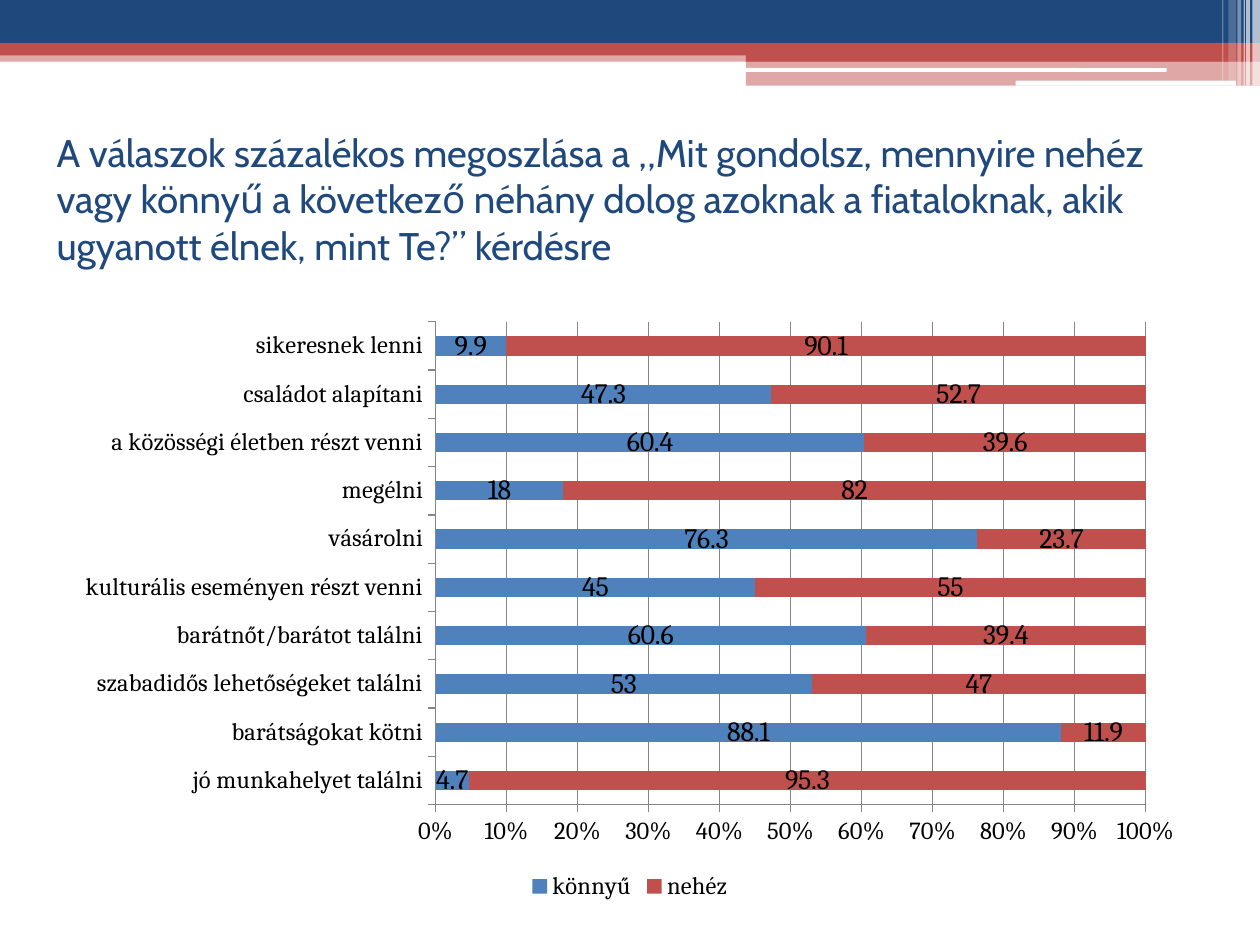
"""Build the slide with the percentage distribution of answers."""
from dataclasses import dataclass

from lxml import etree
from pptx import Presentation
from pptx.chart.data import CategoryChartData
from pptx.dml.color import RGBColor
from pptx.enum.chart import XL_CHART_TYPE, XL_LEGEND_POSITION, XL_TICK_MARK
from pptx.enum.shapes import MSO_SHAPE
from pptx.enum.text import MSO_ANCHOR
from pptx.oxml.ns import qn
from pptx.util import Inches, Pt

RECTANGLE = MSO_SHAPE.RECTANGLE
ROUNDED = MSO_SHAPE.ROUNDED_RECTANGLE
STACKED_BARS = XL_CHART_TYPE.BAR_STACKED_100
BOTTOM = XL_LEGEND_POSITION.BOTTOM
TICK_OUTSIDE = XL_TICK_MARK.OUTSIDE
TICK_NONE = XL_TICK_MARK.NONE
MIDDLE = MSO_ANCHOR.MIDDLE

COLUMNS, ROWS = 100, 75


@dataclass(frozen=True)
class Theme:
    """Colours, fonts and type sizes of the slide."""
    navy: str = "1F497D"
    red: str = "C0504D"
    blue: str = "4F81BD"
    white: str = "FFFFFF"
    black: str = "000000"
    grey: str = "868686"
    title_font: str = "Cabin"
    chart_font: str = "Cambria"
    title_size: int = 22
    label_size: int = 16
    axis_size: int = 14


THEME = Theme()

TITLE = (
    "A válaszok százalékos megoszlása a „Mit gondolsz, mennyire nehéz vagy "
    "könnyű a következő néhány dolog azoknak a fiataloknak, akik ugyanott "
    "élnek, mint Te?” kérdésre"
)

BANDS = [
    ((0, 4, 100, 0.9), THEME.red, 50),
    ((0, 0, 100, 3.4), THEME.navy, 100),
    ((0, 3.4, 100, 1), THEME.red, 100),
    ((59.2, 3.9, 40.8, 1), THEME.red, 100),
    ((59.2, 4.8, 40.8, 2), THEME.red, 50),
]
SLOTS = [(59.1, 5.4, 33.5, 0.3), (80.6, 6.4, 17.5, 0.4)]
STRIPES = [
    (99.4, 0.6, 6.8, 65),
    (98.9, 0.3, 6.8, 65),
    (98.7, 0.1, 6.8, 60),
    (98.2, 0.3, 6.8, 40),
    (97.5, 0.6, 6.4, 20),
    (97, 0.1, 6.4, 30),
]

ANSWERS = {
    "jó munkahelyet találni": (4.7, 95.3),
    "barátságokat kötni": (88.1, 11.9),
    "szabadidős lehetőségeket találni": (53, 47),
    "barátnőt/barátot találni": (60.6, 39.4),
    "kulturális eseményen részt venni": (45, 55),
    "vásárolni": (76.3, 23.7),
    "megélni": (18, 82),
    "a közösségi életben részt venni": (60.4, 39.6),
    "családot alapítani": (47.3, 52.7),
    "sikeresnek lenni": (9.9, 90.1),
}
SERIES = {"könnyű": THEME.blue, "nehéz": THEME.red}


def apply_format(target, values):
    """Set every attribute named in a dict of format values."""
    for name, value in values.items():
        setattr(target, name, value)


class SlideBuilder:
    """Draws elements on the current slide in the style of a theme."""

    def __init__(self, presentation, theme):
        """Add a blank slide and keep the theme."""
        self.theme = theme
        self.cell_width = presentation.slide_width / COLUMNS
        self.cell_height = presentation.slide_height / ROWS
        self.slide = presentation.slides.add_slide(presentation.slide_layouts[6])

    def place(self, box):
        """Turn columns and rows into slide lengths."""
        left, top, width, height = box
        return (round(left * self.cell_width), round(top * self.cell_height),
                round(width * self.cell_width), round(height * self.cell_height))

    def style_font(self, font, name, size, color):
        """Give a font its name, size and colour."""
        apply_format(font, {"name": name, "size": Pt(size), "bold": False})
        font.color.rgb = RGBColor.from_string(color)

    def band(self, box, color, opacity=100, kind=RECTANGLE):
        """Draw a borderless band with an opacity in percent."""
        shape = self.slide.shapes.add_shape(kind, *self.place(box))
        shape.shadow.inherit = False
        shape.line.fill.background()
        shape.fill.solid()
        shape.fill.fore_color.rgb = RGBColor.from_string(color)
        if opacity < 100:
            color_element = next(shape.element.spPr.iter(qn("a:srgbClr")))
            alpha = etree.SubElement(color_element, qn("a:alpha"))
            alpha.set("val", str(opacity * 1000))

    def title(self, box, text):
        """Write the title in a wrapped text box."""
        frame = self.slide.shapes.add_textbox(*self.place(box)).text_frame
        apply_format(frame, {"word_wrap": True, "vertical_anchor": MIDDLE})
        run = frame.paragraphs[0].add_run()
        run.text = text
        self.style_font(run.font, self.theme.title_font,
                        self.theme.title_size, self.theme.navy)

    def axis(self, axis, values):
        """Format an axis, its line and its labels."""
        apply_format(axis, {"major_tick_mark": TICK_OUTSIDE,
                            "minor_tick_mark": TICK_NONE, **values})
        lines = [axis.format.line]
        if axis.has_major_gridlines:
            lines.append(axis.major_gridlines.format.line)
        for line in lines:
            line.color.rgb = RGBColor.from_string(self.theme.grey)
            line.width = Pt(0.75)
        self.style_font(axis.tick_labels.font, self.theme.chart_font,
                        self.theme.axis_size, self.theme.black)

    def bar_chart(self, box, answers, series_colors):
        """Draw stacked percentage bars with value labels and a legend."""
        theme = self.theme
        data = CategoryChartData()
        data.categories = list(answers)
        for name, values in zip(series_colors, zip(*answers.values())):
            data.add_series(name, values)
        chart = self.slide.shapes.add_chart(
            STACKED_BARS, *self.place(box), data).chart
        apply_format(chart, {"has_title": False, "has_legend": True})
        self.style_font(chart.font, theme.chart_font, theme.axis_size, theme.black)
        apply_format(chart.legend, {"position": BOTTOM, "include_in_layout": False})
        self.style_font(chart.legend.font, theme.chart_font,
                        theme.axis_size, theme.black)
        self.axis(chart.category_axis, {"has_major_gridlines": False})
        self.axis(chart.value_axis, {"has_major_gridlines": True,
                                     "major_unit": 0.1,
                                     "minimum_scale": 0, "maximum_scale": 1})
        apply_format(chart.value_axis.tick_labels,
                     {"number_format": "0%", "number_format_is_linked": False})
        plot = chart.plots[0]
        apply_format(plot, {"gap_width": 150, "overlap": 100,
                            "vary_by_categories": False})
        for series, color in zip(plot.series, series_colors.values()):
            series.format.fill.solid()
            series.format.fill.fore_color.rgb = RGBColor.from_string(color)
            series.data_labels.show_value = True
            self.style_font(series.data_labels.font, theme.chart_font,
                            theme.label_size, theme.black)


def main():
    """Build and save the presentation."""
    presentation = Presentation()
    apply_format(presentation, {"slide_width": Inches(10),
                                "slide_height": Inches(7.5)})
    builder = SlideBuilder(presentation, THEME)
    for box, color, opacity in BANDS:
        builder.band(box, color, opacity)
    for box in SLOTS:
        builder.band(box, THEME.white, kind=ROUNDED)
    for left, width, height, opacity in STRIPES:
        builder.band((left, 0, width, height), THEME.white, opacity)
    builder.title((3.5, 9.9, 92.1, 11.7), TITLE)
    builder.bar_chart((5, 24.6, 90, 47.3), ANSWERS, SERIES)
    presentation.save("out.pptx")


if __name__ == "__main__":
    main()
